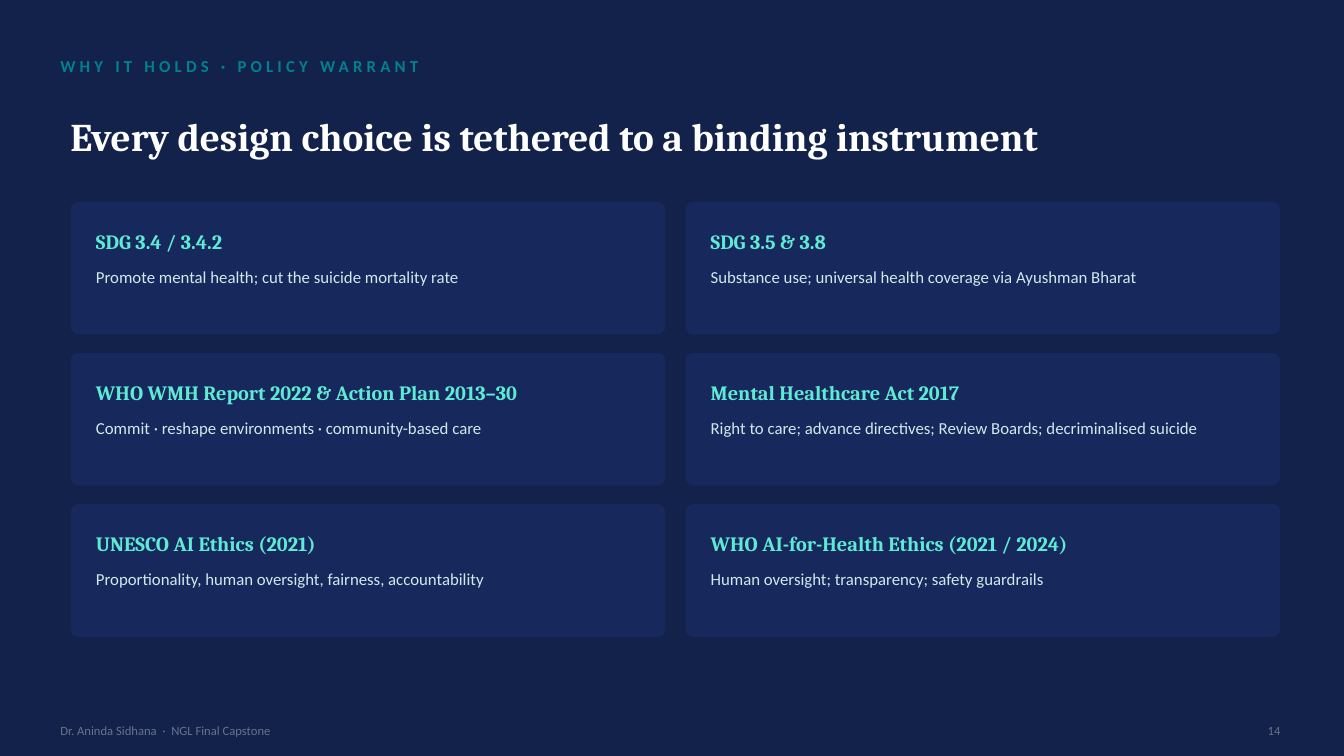
import pptx
import pptx.util
import pptx.dml.color
import pptx.enum.shapes
import pptx.enum.text

Cm, Pt = pptx.util.Cm, pptx.util.Pt
RGB = pptx.dml.color.RGBColor
ALIGN = pptx.enum.text.PP_ALIGN
ANCHOR = pptx.enum.text.MSO_ANCHOR

KICKER = "WHY IT HOLDS · POLICY WARRANT"
TITLE = "Every design choice is tethered to a binding instrument"
CARDS = [
    ("SDG 3.4 / 3.4.2", "Promote mental health; cut the suicide mortality rate"),
    ("SDG 3.5 & 3.8", "Substance use; universal health coverage via Ayushman Bharat"),
    ("WHO WMH Report 2022 & Action Plan 2013–30",
     "Commit · reshape environments · community-based care"),
    ("Mental Healthcare Act 2017",
     "Right to care; advance directives; Review Boards; decriminalised suicide"),
    ("UNESCO AI Ethics (2021)",
     "Proportionality, human oversight, fairness, accountability"),
    ("WHO AI-for-Health Ethics (2021 / 2024)",
     "Human oversight; transparency; safety guardrails"),
]
FOOTER = "Dr. Aninda Sidhana  ·  NGL Final Capstone"
PAGE = "14"

NAVY = RGB(0x12, 0x22, 0x4A)
PANEL = RGB(0x17, 0x29, 0x5C)
TEAL = RGB(0x02, 0x80, 0x90)
MINT = RGB(0x5E, 0xEA, 0xD4)
PALE = RGB(0xCF, 0xE9, 0xEC)
GREY = RGB(0x64, 0x74, 0x8B)
WHITE = RGB(0xFF, 0xFF, 0xFF)
HEAD, BODY = "Cambria", "Calibri"

# Card grid, in centimetres
COLS = 2
LEFT, TOP = 1.78, 5.08
WIDE, HIGH = 14.99, 3.35
STEP_X, STEP_Y = 15.49, 3.81
PAD = 0.64


def place(shape, x, y, w, h):
    shape.left, shape.top, shape.width, shape.height = map(Cm, (x, y, w, h))


def write(shape, text, face, size, color, bold=False, inset=True,
          anchor=ANCHOR.MIDDLE, align=ALIGN.LEFT):
    """Fill a shape with one styled line and return its run."""
    frame = shape.text_frame
    frame.text = text
    frame.word_wrap = True
    frame.auto_size = pptx.enum.text.MSO_AUTO_SIZE.NONE
    frame.vertical_anchor = anchor
    if not inset:
        frame.margin_left = frame.margin_right = 0
        frame.margin_top = frame.margin_bottom = 0
    line = frame.paragraphs[0]
    line.alignment = align
    run = line.runs[0]
    run.font.name, run.font.size, run.font.bold = face, Pt(size), bold
    run.font.color.rgb = color
    return run


def label(slide, x, y, w, h, *words, **style):
    box = slide.shapes.add_textbox(Cm(x), Cm(y), Cm(w), Cm(h))
    return write(box, *words, **style)


def card(slide, x, y, name, note):
    kind = pptx.enum.shapes.MSO_SHAPE.ROUNDED_RECTANGLE
    panel = slide.shapes.add_shape(kind, Cm(x), Cm(y), Cm(WIDE), Cm(HIGH))
    panel.adjustments[0] = 0.06
    panel.shadow.inherit = False
    panel.fill.solid()
    panel.fill.fore_color.rgb = PANEL
    panel.line.fill.background()
    label(slide, x + PAD, y + 0.36, 13.72, 1.27, name, HEAD, 14.5, MINT,
          bold=True, inset=False)
    label(slide, x + PAD, y + 1.63, 13.84, 1.52, note, BODY, 12, PALE,
          inset=False, anchor=ANCHOR.TOP)


def main():
    deck = pptx.Presentation()
    deck.slide_width, deck.slide_height = Cm(33.87), Cm(19.05)
    slide = deck.slides.add_slide(deck.slide_layouts[5])
    slide.background.fill.solid()
    slide.background.fill.fore_color.rgb = NAVY

    title = slide.shapes.title
    place(title, 1.52, 2.29, 30.48, 2.29)
    write(title, TITLE, HEAD, 28, WHITE, bold=True)

    run = label(slide, 1.52, 1.27, 22.86, 0.76, KICKER, BODY, 12, TEAL,
                bold=True, inset=False)
    run.font._element.set("spc", "300")

    for i, (name, note) in enumerate(CARDS):
        row, col = divmod(i, COLS)
        card(slide, LEFT + col * STEP_X, TOP + row * STEP_Y, name, note)

    label(slide, 1.27, 18.03, 20.32, 0.76, FOOTER, BODY, 9, GREY)
    label(slide, 31.5, 18.03, 1.02, 0.76, PAGE, BODY, 9, GREY, align=ALIGN.RIGHT)
    deck.save("out.pptx")


if __name__ == "__main__":
    main()
